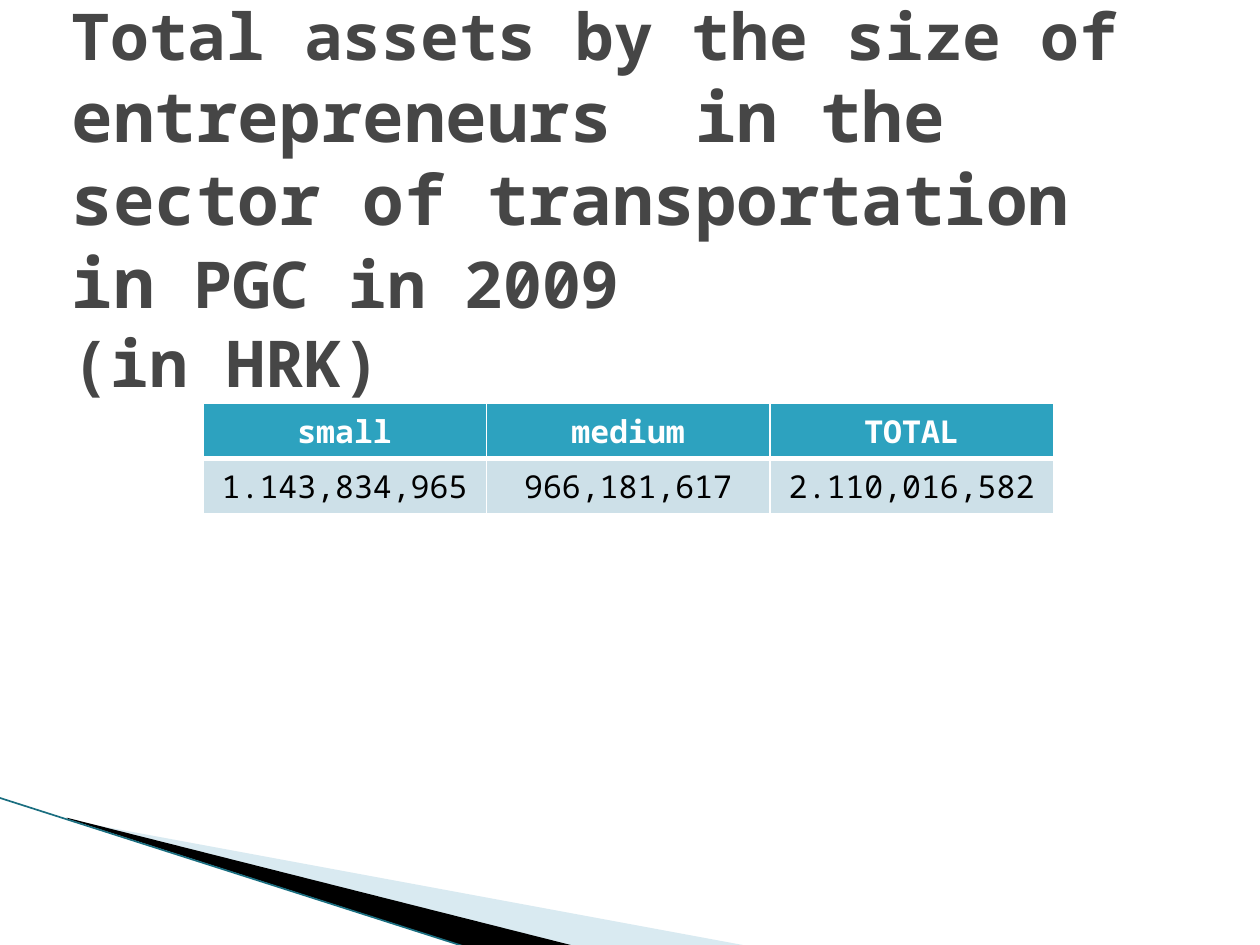
from lxml.etree import SubElement
from pptx import Presentation
from pptx.dml.color import RGBColor
from pptx.enum.shapes import MSO_CONNECTOR as Connector
from pptx.enum.text import MSO_ANCHOR as Anchor, PP_ALIGN as Align
from pptx.oxml import parse_xml
from pptx.oxml.ns import nsdecls, qn
from pptx.util import Inches, Pt

FONT = "Noto Sans Mono"
TITLE = [
    ("Total assets by the size of ", 36.9),
    ("entrepreneurs  in the sector of transportation in", 39.6),
    (" PGC in 2009 ", 36.9),
    ("(in HRK)", 36.9),
]
ROWS = [
    ("small", "medium", "TOTAL"),
    ("1.143,834,965", "966,181,617", "2.110,016,582"),
]
HEADER = {"fill": "2DA2BF", "color": "FFFFFF", "bold": True, "bottom": 3}
BODY = {"fill": "CDE0E8", "color": "000000", "bold": False, "bottom": 1}
LIGHT_WEDGE = [(0.55, 6.51), (5.95, 7.51), (4.56, 7.51), (0.55, 6.5)]
DARK_WEDGE = [(0.53, 6.49), (4.57, 7.51), (3.72, 7.52), (0.54, 6.5)]


def rgb(value):
    """Turn a hex string into a colour."""
    return RGBColor.from_string(value)


def style_font(font, size, color, bold):
    """Apply the slide's typeface and the given format values."""
    for name, value in {"name": FONT, "size": Pt(size), "bold": bold}.items():
        setattr(font, name, value)
    font.color.rgb = rgb(color)


def set_frame(shape, left, top, width, height):
    """Give a freeform a new frame while its outline stays in place."""
    frame = dict(zip(("left", "top", "width", "height"),
                     map(Inches, (left, top, width, height))))
    shift_x, shift_y = shape.left - frame["left"], shape.top - frame["top"]
    outline = next(shape._element.iter(qn("a:path")))
    for point in outline.iter(qn("a:pt")):
        point.set("x", str(int(point.get("x")) + shift_x))
        point.set("y", str(int(point.get("y")) + shift_y))
    outline.set("w", str(frame["width"]))
    outline.set("h", str(frame["height"]))
    for name, value in frame.items():
        setattr(shape, name, value)


def add_wedge(page, frame, points, color, opacity=100):
    """Draw a filled outline through points given in inches."""
    corners = [(Inches(x), Inches(y)) for x, y in points]
    builder = page.shapes.build_freeform(*corners[0], scale=1.0)
    builder.add_line_segments(corners[1:], close=True)
    wedge = builder.convert_to_shape()
    set_frame(wedge, *frame)
    wedge.shadow.inherit = False
    wedge.fill.solid()
    wedge.fill.fore_color.rgb = rgb(color)
    wedge.line.fill.background()
    if opacity < 100:
        tone = wedge.fill._xPr.find(qn("a:solidFill"))[0]
        SubElement(tone, qn("a:alpha")).set("val", str(opacity * 1000))


def add_corner(page, left, top, right, bottom):
    """Draw the sweeping wedges and the edge line in the lower left corner."""
    add_wedge(page, (left + 0.79, top - 0.86, 4.16, 1.58),
              LIGHT_WEDGE, "A0CBDC", 40)
    add_wedge(page, (left - 0.05, top, 4.16, 0.92), DARK_WEDGE, "000000")
    edge = page.shapes.add_connector(
        Connector.STRAIGHT, *map(Inches, (left, top, right, bottom)))
    edge.line.color.rgb = rgb("1A6E80")
    edge.line.width = Pt(0.95)
    SubElement(edge._element.spPr, qn("a:effectLst"))


def add_title(page, left, top, width, height):
    """Place the heading, with its last part on a new line."""
    box = page.shapes.add_textbox(*map(Inches, (left, top, width, height)))
    frame = box.text_frame
    frame.word_wrap = True
    frame.vertical_anchor = Anchor.MIDDLE
    para = frame.paragraphs[0]
    for text, size in TITLE:
        if text == TITLE[-1][0]:
            para.add_line_break()
        span = para.add_run()
        span.text = text
        style_font(span.font, size, "464646", True)


def add_borders(cell, bottom):
    """Give a cell white borders, with its own bottom width in points."""
    widths = {"lnL": 1, "lnR": 1, "lnT": 1, "lnB": bottom}
    for index, (side, width) in enumerate(widths.items()):
        border = parse_xml(
            f'<a:{side} {nsdecls("a")} w="{Pt(width)}"><a:solidFill>'
            f'<a:srgbClr val="FFFFFF"/></a:solidFill></a:{side}>')
        cell._tc.get_or_add_tcPr().insert(index, border)


def add_assets_table(page, left, top, width, height):
    """Place the table of assets by size of entrepreneur."""
    area = map(Inches, (left, top, width, height))
    table = page.shapes.add_table(len(ROWS), len(ROWS[0]), *area).table
    for row, (texts, look) in enumerate(zip(ROWS, (HEADER, BODY))):
        for column, text in enumerate(texts):
            cell = table.cell(row, column)
            cell.fill.solid()
            cell.fill.fore_color.rgb = rgb(look["fill"])
            add_borders(cell, look["bottom"])
            para = cell.text_frame.paragraphs[0]
            para.alignment = Align.CENTER
            span = para.add_run()
            span.text = text
            style_font(span.font, 18, look["color"], look["bold"])


def main():
    """Build the slide and save the deck."""
    deck = Presentation()
    deck.slide_width, deck.slide_height = Inches(10), Inches(7.5)
    page = deck.slides.add_slide(deck.slide_layouts[6])
    add_corner(page, -0.01, 6.33, 3.71, 7.52)
    add_assets_table(page, 1.61, 3.2, 6.75, 0.82)
    add_title(page, 0.47, 0.55, 9, 2.04)
    deck.save("out.pptx")


if __name__ == "__main__":
    main()
